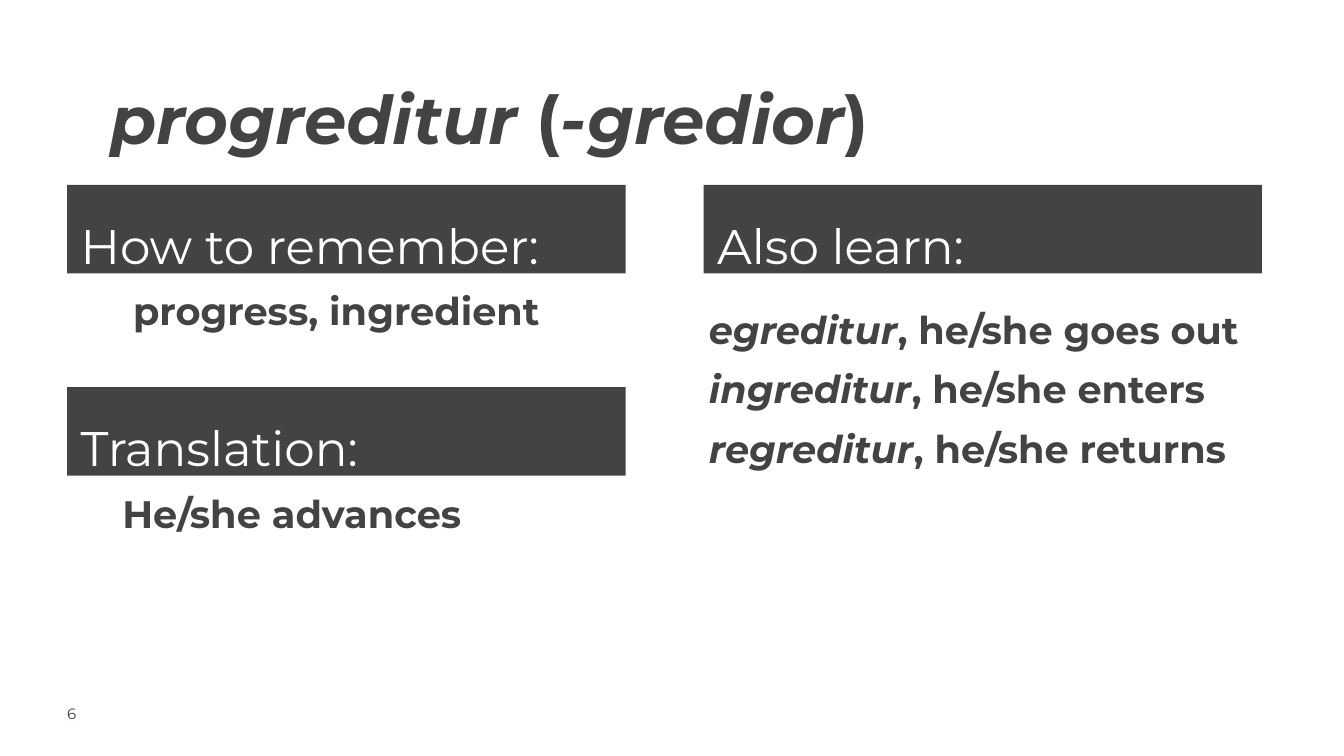
"""Build the vocabulary slide for the Latin verb progreditur."""
import pptx
import pptx.dml.color
import pptx.enum.shapes
import pptx.enum.text
import pptx.util
from pptx.util import Inches

COLOURS = {"charcoal": "434343", "white": "FFFFFF", "plum": "4B3241"}
FONT = "Montserrat"
LEFT_COLUMN, RIGHT_COLUMN = 1, 10.47


def rgb(name):
    return pptx.dml.color.RGBColor.from_string(COLOURS[name])


def write(shape, lines, size, colour, bold=False, spacing=1.0, inset=0.2):
    """Fill a shape with lines, each a list of (text, italic) runs."""
    frame = shape.text_frame
    frame.word_wrap = True
    frame.vertical_anchor = pptx.enum.text.MSO_ANCHOR.TOP
    frame.margin_left = frame.margin_right = Inches(inset)
    frame.margin_top = frame.margin_bottom = Inches(inset)
    for index, runs in enumerate(lines):
        paragraph = frame.add_paragraph() if index else frame.paragraphs[0]
        paragraph.alignment = pptx.enum.text.PP_ALIGN.LEFT
        paragraph.line_spacing = spacing
        paragraph.font.name = FONT
        paragraph.font.size = pptx.util.Pt(size)
        paragraph.font.bold = bold
        paragraph.font.color.rgb = rgb(colour)
        for text, italic in runs:
            run = paragraph.add_run()
            run.text = text
            run.font.italic = italic


def add_heading(slide, left, top, label):
    """Add a dark heading bar."""
    bar = slide.shapes.add_shape(
        pptx.enum.shapes.MSO_SHAPE.RECTANGLE,
        Inches(left), Inches(top), Inches(8.31), Inches(1.32))
    bar.shadow.inherit = False
    bar.fill.solid()
    bar.fill.fore_color.rgb = rgb("charcoal")
    bar.line.fill.background()
    write(bar, [[(label, False)]], 52, "white", spacing=1.3)


def add_text(slide, box, lines, size, colour="charcoal", **style):
    """Add a text box at (left, top, width, height) in inches."""
    write(slide.shapes.add_textbox(*map(Inches, box)), lines, size, colour, **style)


def main():
    """Build and save the slide."""
    deck = pptx.Presentation()
    deck.slide_width, deck.slide_height = Inches(20), Inches(11.25)
    slide = deck.slides.add_slide(deck.slide_layouts[6])

    title = [("progreditur ", True), ("(", False), ("-gredior", True), (")", False)]
    add_text(slide, (1.64, 0.97, 17.36, 1.78), [title], 72,
             bold=True, spacing=1.15, inset=0)

    add_heading(slide, LEFT_COLUMN, 2.75, "How to remember:")
    add_text(slide, (1.78, 4.08, 8.69, 1.32),
             [[("progress, ingredient", False)]], 41, bold=True)

    add_heading(slide, LEFT_COLUMN, 5.76, "Translation:")
    add_text(slide, (1.62, 7.09, 7.67, 1.32),
             [[("He/she advances", False)]], 41, bold=True)

    add_heading(slide, RIGHT_COLUMN, 2.75, "Also learn:")
    related = {"egreditur": "goes out", "ingreditur": "enters", "regreditur": "returns"}
    add_text(slide, (10.35, 4.15, 8.41, 1.32),
             [[(verb, True), (f", he/she {meaning}", False)]
              for verb, meaning in related.items()],
             41, bold=True, spacing=1.3)

    add_text(slide, (LEFT_COLUMN, 10.48, 1.57, 0.39), [[("6", False)]], 16, "plum", inset=0)
    deck.save("out.pptx")


if __name__ == "__main__":
    main()
